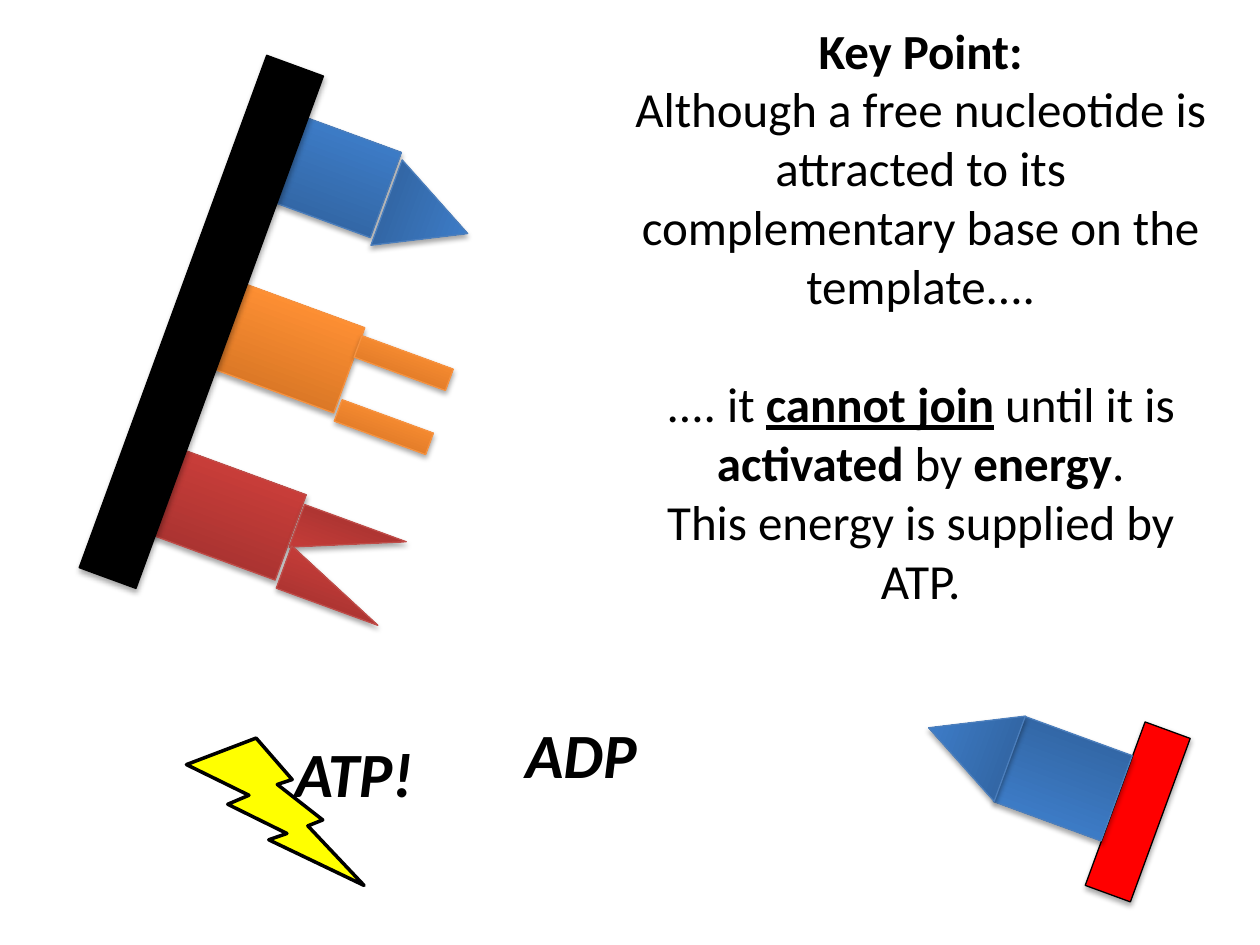
from pptx import Presentation
from pptx.dml.color import RGBColor
from pptx.enum import shapes, text
from pptx.oxml import parse_xml
from pptx.oxml.ns import nsdecls
from pptx.util import Cm, Pt

KIND = shapes.MSO_SHAPE
TILT = 20.1
# gradient stops at 0, 80 and 100 percent, then the outline
BLUE = ("2F5F99", "3D7CC7", "3A7CCB", "4B7EBC")
ORANGE = ("CC6E20", "FF9034", "FF9136", "F69240")
RED = ("9C2F2D", "CB3E3A", "CE3B37", "BF4C48")
BASE_HEIGHT = 1.83


def color(value):
    return RGBColor.from_string(value)


def add_solid(parent, kind, box, fill, line_width=0.75, rotation=0):
    shape = parent.add_shape(kind, *(Cm(length) for length in box))
    shape.rotation = rotation
    shape.shadow.inherit = False
    shape.fill.solid()
    shape.fill.fore_color.rgb = color(fill)
    shape.line.color.rgb = color("000000")
    shape.line.width = Pt(line_width)
    return shape


def add_shadow(shape):
    effects = shape.element.spPr.find(
        "{http://schemas.openxmlformats.org/drawingml/2006/main}effectLst")
    effects.append(parse_xml(
        f'<a:outerShdw {nsdecls("a")} blurRad="39370" dist="22860" dir="5400000" '
        'rotWithShape="0"><a:srgbClr val="000000"><a:alpha val="35000"/>'
        '</a:srgbClr></a:outerShdw>'))


def add_backbone(parent, box, fill, rotation):
    add_shadow(add_solid(parent, KIND.RECTANGLE, box, fill, rotation=rotation))


def add_base_part(parent, kind, box, palette, rotation=TILT, flip=""):
    """Add one shaded piece of a base; flip holds any of the letters H and V."""
    *stops, outline = palette
    shape = add_solid(parent, kind, box, stops[0], rotation=rotation)
    shape.line.color.rgb = color(outline)
    add_shadow(shape)
    properties = shape.element.spPr
    for axis in flip:
        properties.xfrm.set(f"flip{axis}", "1")
    stop_xml = "".join(
        f'<a:gs pos="{position * 1000}"><a:srgbClr val="{value}"/></a:gs>'
        for position, value in zip((0, 80, 100), stops))
    solid = properties.find(
        "{http://schemas.openxmlformats.org/drawingml/2006/main}solidFill")
    properties.replace(solid, parse_xml(
        f'<a:gradFill {nsdecls("a")} rotWithShape="1"><a:gsLst>{stop_xml}</a:gsLst>'
        '<a:lin ang="16200000" scaled="0"/></a:gradFill>'))
    return shape


def add_pointed_base(parent, body_at, point_at, rotation):
    add_base_part(parent, KIND.RECTANGLE, (*body_at, 2.31, BASE_HEIGHT), BLUE, rotation)
    point = add_base_part(parent, KIND.ISOSCELES_TRIANGLE,
                          (*point_at, BASE_HEIGHT, 1.75), BLUE, rotation + 90)
    point.adjustments[0] = 0.514


def add_pronged_base(parent):
    add_base_part(parent, KIND.RECTANGLE, (4.5, 6.1, 2.62, BASE_HEIGHT), ORANGE, flip="H")
    for left, top in ((7.16, 7.09), (6.76, 8.38)):
        add_base_part(parent, KIND.RECTANGLE, (left, top, 1.96, 0.46), ORANGE, flip="H")


def add_notched_base(parent):
    add_base_part(parent, KIND.RECTANGLE, (3.05, 9.42, 2.9, BASE_HEIGHT), RED, flip="H")
    for left, top, flip in ((5.92, 10.52, "H"), (5.66, 11.35, "HV")):
        add_base_part(parent, KIND.RIGHT_TRIANGLE, (left, top, 2.18, 0.91), RED,
                      TILT + 180, flip)


def add_template_strand(slide):
    strand = slide.shapes.add_group_shape().shapes
    add_pointed_base(strand, (5.54, 2.62), (7.7, 3.51), TILT)
    add_pronged_base(strand)
    add_notched_base(strand)
    add_backbone(strand, (3.45, 0.99, 1.22, 11), "000000", TILT)


def add_free_nucleotide(slide):
    nucleotide = slide.shapes.add_group_shape().shapes
    add_backbone(nucleotide, (22.45, 14.61, 0.97, 3.51), "FF0000", TILT + 180)
    add_pointed_base(nucleotide, (20.27, 14.78), (18.62, 14.12), TILT + 180)


def add_text(slide, box, paragraphs, size):
    """Add centred paragraphs of (words, style) runs; style holds letters b, i, u."""
    frame = slide.shapes.add_textbox(*(Cm(length) for length in box)).text_frame
    frame.word_wrap = True
    frame.auto_size = text.MSO_AUTO_SIZE.SHAPE_TO_FIT_TEXT
    for index, runs in enumerate(paragraphs):
        paragraph = frame.add_paragraph() if index else frame.paragraphs[0]
        paragraph.alignment = text.PP_ALIGN.CENTER
        for words, style in runs:
            run = paragraph.add_run()
            run.text = words
            font = run.font
            font.name, font.size = "Calibri", Pt(size)
            font.color.rgb = color("000000")
            font.bold, font.italic, font.underline = (mark in style for mark in "biu")
    return frame


def add_key_point(slide):
    key_point = add_text(slide, (12.5, 0.28, 12.12, 12.22), [
        [("Key Point:", "b")],
        [("Although a free nucleotide is attracted to its complementary base "
          "on the template....", "")],
        [(".... it ", ""), ("cannot join", "bu"), (" until it is ", ""),
         ("activated", "b"), (" by ", ""), ("energy", "b"), (".", "")],
        [("This energy is supplied by ATP.", "")],
    ], 28)
    key_point.paragraphs[2].space_before = Pt(34)


def main():
    deck = Presentation()
    deck.slide_width, deck.slide_height = Cm(25.4), Cm(19.05)
    slide = deck.slides.add_slide(deck.slide_layouts[6])
    add_template_strand(slide)
    add_free_nucleotide(slide)
    add_key_point(slide)
    add_solid(slide.shapes, KIND.LIGHTNING_BOLT, (3.76, 14.88, 3.58, 2.97), "FFFF00", 2)
    for molecule, left, top in (("ATP!", 4.95, 14.68), ("ADP", 9.53, 14.3)):
        add_text(slide, (left, top, 4.37, 1.8), [[(molecule, "bi")]], 36)
    deck.save("out.pptx")


if __name__ == "__main__":
    main()
